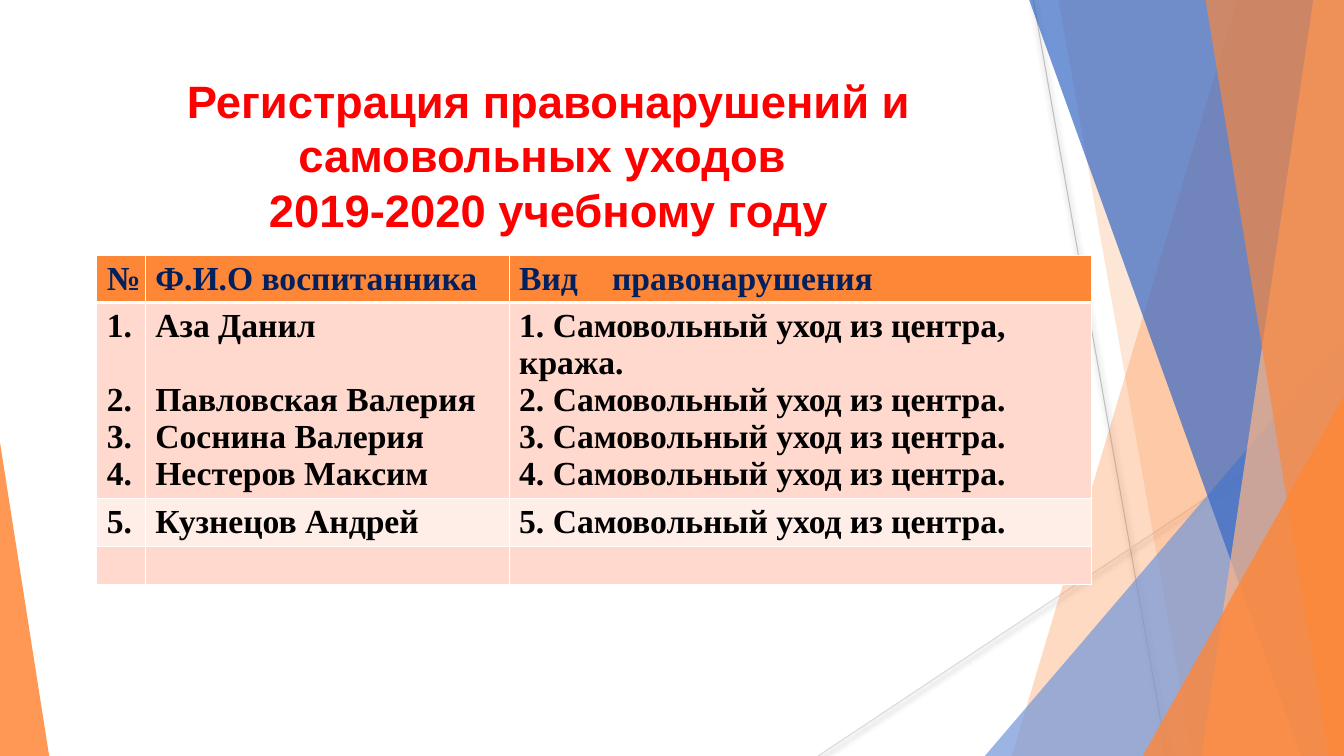
from lxml.etree import SubElement
from pptx import Presentation
from pptx.dml.color import RGBColor
from pptx.enum.shapes import MSO_CONNECTOR, MSO_SHAPE
from pptx.enum.text import MSO_ANCHOR, MSO_AUTO_SIZE, PP_ALIGN
from pptx.oxml.ns import qn
from pptx.util import Cm, Pt

WIDTH, HEIGHT = 33.87, 19.05
ORANGE = "FE8637"


def color(value):
    return RGBColor.from_string(value)


def assign(obj, values):
    for name, value in values.items():
        setattr(obj, name, value)


def add_xml(parent, tag, **attrs):
    return SubElement(parent, qn(tag), {k: str(v) for k, v in attrs.items()})


def add_alpha(parent, value, percent):
    clr = add_xml(parent, "a:srgbClr", val=value)
    add_xml(clr, "a:alpha", val=percent * 1000)


class SlideBuilder:
    title_font = {"name": "Arial", "size": Pt(32.4), "bold": True}
    table_font = {"name": "Times New Roman", "size": Pt(24), "bold": True}
    line_gap = Pt(26.5)

    def __init__(self, prs):
        self.s = prs.slides.add_slide(prs.slide_layouts[5])

    def title(self, text, left, top, width, height):
        sp = self.s.shapes.title
        assign(sp, {"left": Cm(left), "top": Cm(top),
                    "width": Cm(width), "height": Cm(height)})
        tf = sp.text_frame
        assign(tf, {"text": text, "word_wrap": True,
                    "auto_size": MSO_AUTO_SIZE.NONE,
                    "vertical_anchor": MSO_ANCHOR.TOP})
        p = tf.paragraphs[0]
        assign(p, {"alignment": PP_ALIGN.CENTER, "line_spacing": Pt(39)})
        for r in p.runs:
            assign(r.font, self.title_font)
            r.font.color.rgb = color("FF0000")

    def line(self, x1, y1, x2, y2, stroke):
        sp = self.s.shapes.add_connector(
            MSO_CONNECTOR.STRAIGHT, Cm(x1), Cm(y1), Cm(x2), Cm(y2))
        sp.line.color.rgb = color(stroke)
        sp.line.width = Pt(0.75)
        effects = add_xml(sp._element.spPr, "a:effectLst")
        shadow = add_xml(effects, "a:outerShdw", blurRad=Pt(4), dist=Pt(2),
                         dir=5400000, rotWithShape=0)
        add_alpha(shadow, "000000", 40)

    def paint(self, sp, fill, opacity):
        sp.shadow.inherit = False
        sp.fill.solid()
        sp.fill.fore_color.rgb = color(fill)
        sp.line.fill.background()
        clr = sp._element.spPr.find(qn("a:solidFill"))[0]
        add_xml(clr, "a:alpha", val=opacity * 1000)

    def band(self, top_x, bottom_x, fill, opacity):
        builder = self.s.shapes.build_freeform(Cm(top_x), Cm(-0.02))
        corners = [(WIDTH, -0.02), (WIDTH, HEIGHT), (bottom_x, HEIGHT)]
        builder.add_line_segments([(Cm(x), Cm(y)) for x, y in corners])
        self.paint(builder.convert_to_shape(), fill, opacity)

    def triangle(self, left, width, height, apex, fill, opacity):
        sp = self.s.shapes.add_shape(
            MSO_SHAPE.ISOSCELES_TRIANGLE, Cm(left), Cm(HEIGHT - height),
            Cm(width), Cm(height))
        sp.adjustments[0] = apex
        self.paint(sp, fill, opacity)

    def borders(self, cell, bottom):
        tc_pr = cell._tc.get_or_add_tcPr()
        for side, width in zip("LRTB", (1, 1, 1, bottom)):
            ln = add_xml(tc_pr, f"a:ln{side}", w=Pt(width))
            add_xml(add_xml(ln, "a:solidFill"), "a:srgbClr", val="FFFFFF")

    def cell(self, cell, lines, fill, ink, gap_after_first, bottom):
        self.borders(cell, bottom)
        cell.fill.solid()
        cell.fill.fore_color.rgb = color(fill)
        tf = cell.text_frame
        for i, text in enumerate(lines):
            p = tf.paragraphs[0] if i == 0 else tf.add_paragraph()
            if "\t" in text:
                tabs = add_xml(p._p.get_or_add_pPr(), "a:tabLst")
                add_xml(tabs, "a:tab", pos=Cm(2.34), algn="l")
            if i == 1 and gap_after_first:
                p.space_before = self.line_gap
            r = p.add_run()
            r.text = text
            assign(r.font, self.table_font)
            r.font.color.rgb = color(ink)
        if not lines:
            assign(cell, {"margin_top": Cm(0.05), "margin_bottom": Cm(0.05)})

    def table(self, rows, left, top, widths, heights):
        table = self.s.shapes.add_table(
            len(rows), len(widths), Cm(left), Cm(top),
            Cm(sum(widths)), Cm(sum(heights))).table
        for column, width in zip(table.columns, widths):
            column.width = Cm(width)
        for i, (row, height) in enumerate(zip(rows, heights)):
            table.rows[i].height = Cm(height)
            header = i == 0
            fill = ORANGE if header else ("FFEDE8", "FFD9CE")[i % 2]
            for j, lines in enumerate(row):
                self.cell(table.cell(i, j), lines, fill,
                          "002060" if header else "000000",
                          j < 2, 3 if header else 1)


def main():
    prs = Presentation()
    prs.slide_width, prs.slide_height = Cm(WIDTH), Cm(HEIGHT)
    slide = SlideBuilder(prs)

    slide.line(26.04, 0, 29.41, HEIGHT, "BFBFBF")
    slide.line(WIDTH, 10.24, 20.62, HEIGHT, "D9D9D9")
    slide.band(31.19, 25.5, ORANGE, 30)
    slide.band(26.67, 30.05, ORANGE, 20)
    slide.triangle(24.82, 9.05, 10.59, 1, "7598D9", 72)
    slide.band(25.93, 32.79, "3668C4", 70)
    slide.band(33.1, 30.28, "FEB687", 70)
    slide.band(30.38, 33.48, ORANGE, 65)
    slide.triangle(28.8, 5.07, 9.07, 1, ORANGE, 80)
    slide.triangle(0, 1.24, 7.9, 0, ORANGE, 85)

    slide.title("Регистрация правонарушений и самовольных уходов \v"
                "2019-2020 учебному году", 1.88, 1.7, 23.88, 3.66)

    offence = "Самовольный уход из центра"
    rows = [
        [["№"], ["Ф.И.О воспитанника"], ["Вид\tправонарушения"]],
        [[f"{n}." for n in range(1, 5)],
         ["Аза Данил", "Павловская Валерия", "Соснина Валерия",
          "Нестеров Максим"],
         [f"1. {offence}, кража."]
         + [f"{n}. {offence}." for n in range(2, 5)]],
        [["5."], ["Кузнецов Андрей"], [f"5. {offence}."]],
        [[], [], []],
    ]
    slide.table(rows, 2.44, 6.43, [1.22, 9.17, 14.68],
                [1.15, 4.95, 1.19, 0.97])
    prs.save("out.pptx")


if __name__ == "__main__":
    main()
